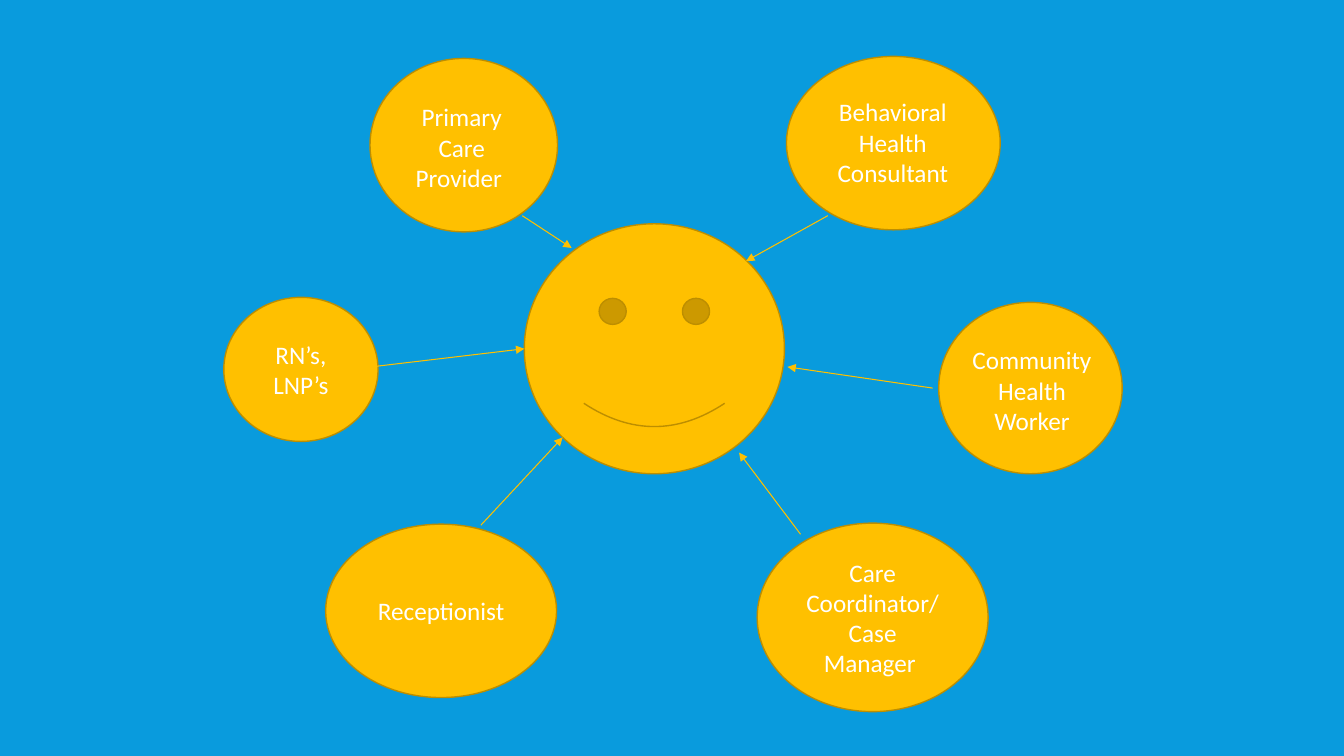
from dataclasses import dataclass

from lxml.etree import SubElement
from pptx import Presentation
from pptx.dml.color import RGBColor
from pptx.enum.shapes import MSO_CONNECTOR, MSO_SHAPE
from pptx.enum.text import MSO_ANCHOR, MSO_AUTO_SIZE, PP_ALIGN
from pptx.oxml.ns import qn
from pptx.util import Inches, Pt


@dataclass(frozen=True)
class Theme:
    background: RGBColor = RGBColor(0x09, 0x9B, 0xDD)
    gold: RGBColor = RGBColor(0xFF, 0xC0, 0x00)
    outline: RGBColor = RGBColor(0xBD, 0x8E, 0x00)
    text: RGBColor = RGBColor(0xFF, 0xFF, 0xFF)
    font: str = "Calibri"
    text_size: float = 18
    outline_width: float = 1
    arrow_width: float = 0.75


class CareTeamSlide:
    def __init__(self, slide, theme):
        self.slide = slide
        self.theme = theme
        fill = slide.background.fill
        fill.solid()
        fill.fore_color.rgb = theme.background

    def set_wording(self, frame, wording):
        frame.word_wrap = True
        frame.text = wording
        paragraph = frame.paragraphs[0]
        paragraph.alignment = PP_ALIGN.CENTER
        font = paragraph.runs[0].font
        font.name = self.theme.font
        font.size = Pt(self.theme.text_size)
        font.color.rgb = self.theme.text

    def gold_shape(self, preset, box, wording=None):
        shape = self.slide.shapes.add_shape(preset, *map(Inches, box))
        shape.shadow.inherit = False
        shape.fill.solid()
        shape.fill.fore_color.rgb = self.theme.gold
        shape.line.color.rgb = self.theme.outline
        shape.line.width = Pt(self.theme.outline_width)
        if wording:
            shape.text_frame.vertical_anchor = MSO_ANCHOR.MIDDLE
            self.set_wording(shape.text_frame, wording)

    def label(self, box, wording):
        frame = self.slide.shapes.add_textbox(*map(Inches, box)).text_frame
        self.set_wording(frame, wording)
        frame.auto_size = MSO_AUTO_SIZE.SHAPE_TO_FIT_TEXT

    def arrow(self, start, end):
        arrow = self.slide.shapes.add_connector(
            MSO_CONNECTOR.STRAIGHT, *map(Inches, start + end))
        arrow.line.color.rgb = self.theme.gold
        arrow.line.width = Pt(self.theme.arrow_width)
        properties = arrow._element.spPr
        SubElement(properties.find(qn("a:ln")), qn("a:tailEnd"), type="triangle")
        SubElement(properties, qn("a:effectLst"))


# Team members with the wording inside their circle
ROLES = [
    ((3.23, 5.2, 2.29, 1.72), "Receptionist"),
    ((7.51, 5.19, 2.29, 1.87), "Care Coordinator/Case Manager "),
    ((2.22, 2.95, 1.53, 1.43), "RN’s, LNP’s"),
]

# Team members with a separate label: circle, label box, wording
LABELLED_ROLES = [
    ((3.67, 0.58, 1.86, 1.72), (3.95, 0.96, 1.26, 1.01), "Primary Care Provider "),
    ((7.8, 0.56, 2.12, 1.72), (8.11, 0.91, 1.49, 1.01), "Behavioral Health Consultant"),
    ((9.31, 3, 1.82, 1.7), (9.49, 3.37, 1.49, 1.01), "Community Health Worker"),
]

# Arrows from each team member to the patient
ARROWS = [
    ((5.18, 2.14), (5.67, 2.46)),
    ((3.68, 3.64), (5.2, 3.46)),
    ((4.77, 5.21), (5.58, 4.34)),
    ((8.21, 2.14), (7.4, 2.59)),
    ((9.25, 3.85), (7.81, 3.64)),
    ((7.94, 5.3), (7.33, 4.49)),
]


def main():
    deck = Presentation()
    deck.slide_width, deck.slide_height = Inches(13.33), Inches(7.5)
    blank_layout = deck.slide_layouts[6]
    team = CareTeamSlide(deck.slides.add_slide(blank_layout), Theme())

    # Patient in the centre
    team.gold_shape(MSO_SHAPE.SMILEY_FACE, (5.2, 2.22, 2.58, 2.48))

    # Care team around the patient
    for circle, wording in ROLES:
        team.gold_shape(MSO_SHAPE.FLOWCHART_CONNECTOR, circle, wording)
    for circle, label_box, wording in LABELLED_ROLES:
        team.gold_shape(MSO_SHAPE.FLOWCHART_CONNECTOR, circle)
        team.label(label_box, wording)

    # Arrows towards the patient
    for start, end in ARROWS:
        team.arrow(start, end)

    deck.save("out.pptx")


if __name__ == "__main__":
    main()
